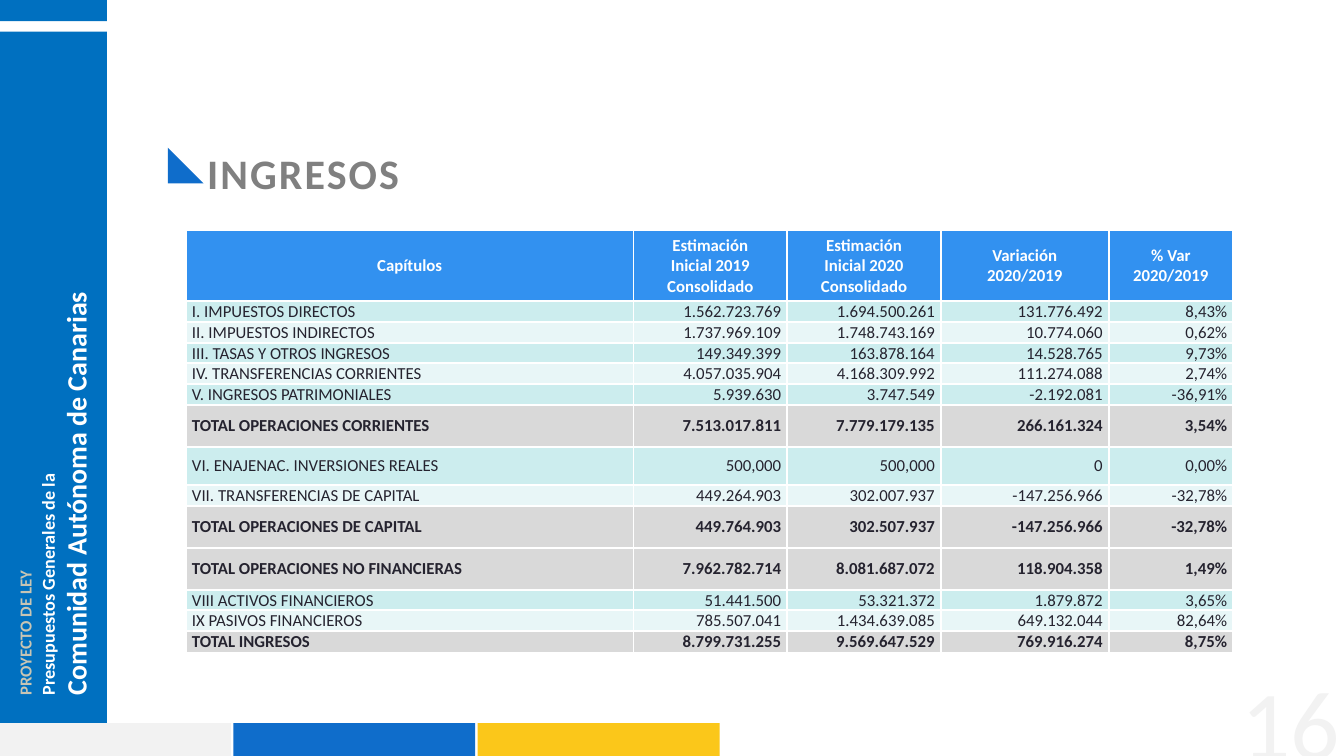
import pptx
import pptx.dml.color
import pptx.enum.shapes
import pptx.enum.text
import pptx.oxml
import pptx.util

Inches, Pt = pptx.util.Inches, pptx.util.Pt
RGBColor = pptx.dml.color.RGBColor
SHAPE = pptx.enum.shapes.MSO_SHAPE
ALIGN = pptx.enum.text.PP_ALIGN
ANCHOR = pptx.enum.text.MSO_ANCHOR

SIDE_BLUE = RGBColor(0x00, 0x70, 0xC0)
BLUE = RGBColor(0x0F, 0x6D, 0xCB)
YELLOW = RGBColor(0xFB, 0xC7, 0x1A)
PALE_GREY = RGBColor(0xF2, 0xF2, 0xF2)
SAND = RGBColor(0xC8, 0xC5, 0xB4)
WHITE = RGBColor(0xFF, 0xFF, 0xFF)
TITLE_GREY = RGBColor(0x80, 0x80, 0x80)
HEADER_BLUE = RGBColor(0x32, 0x91, 0xF0)
INK = RGBColor(0x25, 0x23, 0x2F)
TOTAL_GREY = RGBColor(0xD9, 0xD9, 0xD9)
STRIPES = (RGBColor(0xCC, 0xED, 0xEE), RGBColor(0xE8, 0xF6, 0xF7))
FONT = "Calibri"

# Content
TITLE = "INGRESOS"
PAGE_NUMBER = "16"
HEADERS = ("Capítulos", "Estimación\vInicial 2019\vConsolidado",
           "Estimación\vInicial 2020\vConsolidado",
           "Variación\v2020/2019", "% Var\v2020/2019")
# Each row: height, then its cells
ROWS = [
    (0.4, "I. IMPUESTOS DIRECTOS", "1.562.723.769", "1.694.500.261", "131.776.492", "8,43%"),
    (0.4, "II. IMPUESTOS INDIRECTOS", "1.737.969.109", "1.748.743.169", "10.774.060", "0,62%"),
    (0.4, "III. TASAS Y OTROS INGRESOS", "149.349.399", "163.878.164", "14.528.765", "9,73%"),
    (0.4, "IV. TRANSFERENCIAS CORRIENTES", "4.057.035.904", "4.168.309.992", "111.274.088", "2,74%"),
    (0.4, "V. INGRESOS PATRIMONIALES", "5.939.630", "3.747.549", "-2.192.081", "-36,91%"),
    (0.83, "TOTAL OPERACIONES CORRIENTES", "7.513.017.811", "7.779.179.135", "266.161.324", "3,54%"),
    (0.77, "VI. ENAJENAC. INVERSIONES REALES", "500,000", "500,000", "0", "0,00%"),
    (0.4, "VII. TRANSFERENCIAS DE CAPITAL", "449.264.903", "302.007.937", "-147.256.966", "-32,78%"),
    (0.83, "TOTAL OPERACIONES DE CAPITAL", "449.764.903", "302.507.937", "-147.256.966", "-32,78%"),
    (0.83, "TOTAL OPERACIONES NO FINANCIERAS", "7.962.782.714", "8.081.687.072", "118.904.358", "1,49%"),
    (0.4, "VIII ACTIVOS FINANCIEROS", "51.441.500", "53.321.372", "1.879.872", "3,65%"),
    (0.4, "IX PASIVOS FINANCIEROS", "785.507.041", "1.434.639.085", "649.132.044", "82,64%"),
    (0.43, "TOTAL INGRESOS", "8.799.731.255", "9.569.647.529", "769.916.274", "8,75%"),
]
HEADER_HEIGHT = 1.42
COLUMN_WIDTHS = (8.88, 3.05, 3.05, 3.33, 2.47)

deck = pptx.Presentation()
deck.slide_width, deck.slide_height = Inches(26.67), Inches(15)
page = deck.slides.add_slide(deck.slide_layouts[5])


def add_block(kind, left, top, width, height, color):
    block = page.shapes.add_shape(kind, *map(Inches, (left, top, width, height)))
    block.shadow.inherit = False
    block.fill.solid()
    block.fill.fore_color.rgb = color
    block.line.fill.background()


def style(para, size, color, bold=False, align=ALIGN.LEFT):
    para.alignment = align
    for span in para.runs:
        span.font.name = FONT
        span.font.size = Pt(size)
        span.font.bold = bold
        span.font.color.rgb = color


def set_margins(target, left, top, right, bottom):
    target.margin_left, target.margin_top = Inches(left), Inches(top)
    target.margin_right, target.margin_bottom = Inches(right), Inches(bottom)


def add_text(left, top, width, height, lines, rotation=0, align=ALIGN.LEFT, margins=None):
    box = page.shapes.add_textbox(*map(Inches, (left, top, width, height)))
    box.rotation = rotation
    frame = box.text_frame
    frame.word_wrap = True
    if margins:
        set_margins(frame, *margins)
    frame.text = "\n".join(line[0] for line in lines)
    for para, (_, size, color, bold) in zip(frame.paragraphs, lines):
        style(para, size, color, bold, align)


def set_borders(cell, color, width):
    properties = cell._tc.get_or_add_tcPr()
    for side in ("lnL", "lnR", "lnT", "lnB"):
        properties.append(pptx.oxml.parse_xml(
            f'<a:{side} xmlns:a="http://schemas.openxmlformats.org/drawingml/2006/main" '
            f'w="{Pt(width)}"><a:solidFill><a:srgbClr val="{color}"/></a:solidFill></a:{side}>'))


# Side band and bottom strip
add_block(SHAPE.RECTANGLE, -0.09, 0.63, 2.21, 14.51, SIDE_BLUE)
for index, color in enumerate((PALE_GREY, BLUE, YELLOW)):
    add_block(SHAPE.RECTANGLE, -0.22 + 4.85 * index, 14.35, 4.8, 0.99, color)
add_block(SHAPE.RECTANGLE, -0.09, -0.06, 2.21, 0.48, SIDE_BLUE)

# Vertical texts and page number
add_text(-5.96, 7.14, 12.91, 0.4, [("PROYECTO DE LEY", 24, SAND, True)],
         rotation=270, margins=(0, 0, 0, 0))
add_text(-2.85, 9.19, 8.19, 1.03,
         [("Presupuestos Generales de la", 26, WHITE, True),
          ("Comunidad Autónoma de Canarias", 40, WHITE, True)],
         rotation=270, margins=(0, 0, 0.1, 0))
add_text(20.47, 13.09, 6.22, 1.92, [(PAGE_NUMBER, 139, PALE_GREY, False)], align=ALIGN.RIGHT)

# Title with its corner mark
title = page.shapes.title
title.left, title.top, title.width, title.height = map(Inches, (4.01, 2.88, 21.93, 0.81))
title.text_frame.text = TITLE
title.text_frame.vertical_anchor = ANCHOR.TOP
title.text_frame.auto_size = pptx.enum.text.MSO_AUTO_SIZE.NONE
style(title.text_frame.paragraphs[0], 60, TITLE_GREY, True)
title.text_frame.paragraphs[0].runs[0].font._element.set("spc", "300")
add_block(SHAPE.RIGHT_TRIANGLE, 3.33, 2.93, 0.71, 0.71, BLUE)

# Income table: stripes start again after each total
heights = [HEADER_HEIGHT] + [row[0] for row in ROWS]
table = page.shapes.add_table(len(heights), len(HEADERS), Inches(3.69), Inches(4.56),
                              Inches(sum(COLUMN_WIDTHS)), Inches(sum(heights))).table
for column, width in zip(table.columns, COLUMN_WIDTHS):
    column.width = Inches(width)
stripe = 0
for row_index, values in enumerate([HEADERS] + [row[1:] for row in ROWS]):
    table.rows[row_index].height = Inches(heights[row_index])
    is_header = row_index == 0
    is_total = values[0].startswith("TOTAL")
    if is_header:
        fill = HEADER_BLUE
    elif is_total:
        fill, stripe = TOTAL_GREY, 0
    else:
        fill, stripe = STRIPES[stripe], 1 - stripe
    for column_index, value in enumerate(values):
        cell = table.cell(row_index, column_index)
        cell.text_frame.text = value
        cell.vertical_anchor = ANCHOR.MIDDLE
        set_margins(cell, 0.12, 0.01, 0.12, 0)
        set_borders(cell, WHITE, 3)
        cell.fill.solid()
        cell.fill.fore_color.rgb = fill
        align = ALIGN.CENTER if is_header else ALIGN.RIGHT if column_index else ALIGN.LEFT
        style(cell.text_frame.paragraphs[0], 24, WHITE if is_header else INK,
              is_header or is_total, align)

deck.save("out.pptx")
